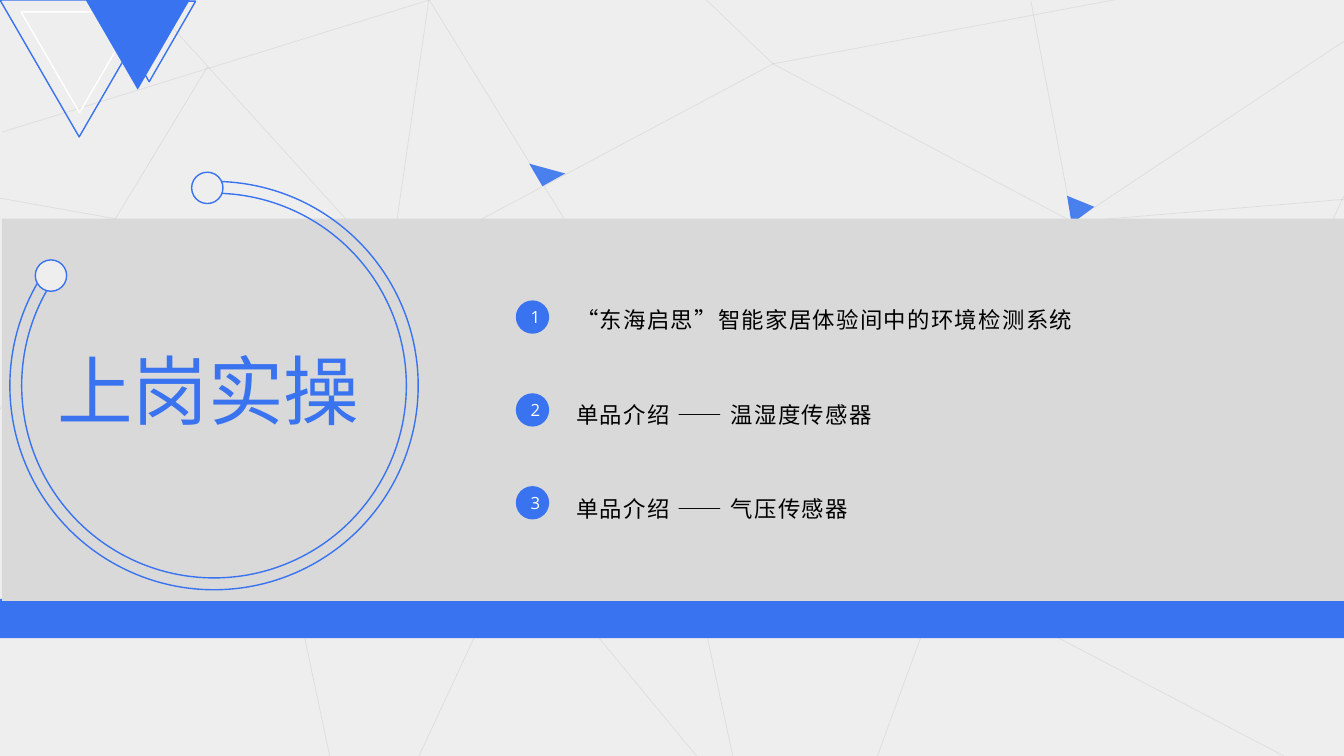
from lxml import etree
from pptx import Presentation, util as u
from pptx.dml import color
from pptx.enum import lang, shapes, text
from pptx.oxml import ns

COLORS = {
    "paper": "EEEEEE",
    "web": "BFBFBF",
    "blue": "3973EF",
    "panel": "D9D9D9",
    "white": "FFFFFF",
    "black": "000000",
}
SHAPE = shapes.MSO_SHAPE
CJK, LATIN = "Noto Sans CJK SC", "Open Sans"

WEB = {
    (9.83, 6.75): [(3.63, -0.1), (10.82, -0.1), (19.5, 1.6), (-2.92, 4.47)],
    (10.82, 0): [(0.05, 3.33), (16.36, 8.99)],
    (16.31, 8.97): [(18.59, 19.63)],
    (13.08, 13.64): [(9.73, 20.83), (17.83, 19.38)],
    (27.03, 5.59): [(21.72, 20.12), (19.46, 1.6), (25.98, 0.03),
                    (34.32, 0.74), (34.75, 4.95)],
    (19.48, 1.61): [(16.48, -1.27), (30.35, -0.43)],
    (7.14, 13.53): [(8.76, 21.18), (-0.1, 16.1), (2.84, 5.51)],
    (30.76, 11.68): [(35.28, 13.87), (33.86, 4.95)],
    (5.23, 1.68): [(-1.17, 12.24)],
    (23.72, 14.53): [(32.89, 19.33)],
}
CORNER_TRIANGLES = [
    ((0, 0, 3.99, 3.45), None, "blue"),
    ((0.53, 0.3, 2.95, 2.54), None, "white"),
    ((2.59, 0.03, 2.34, 2.03), None, "blue"),
    ((2.62, 0.2, 1.73, 1.47), None, "white"),
    ((2.16, 0, 2.62, 2.26), "blue", None),
]
TOPICS = [
    ("“东海启思”智能家居体验间中的环境检测系统", 14.58),
    ("单品介绍 —— 温湿度传感器", 8.97),
    ("单品介绍 —— 气压传感器", 8.97),
]


def set_all(target, values):
    for name, value in values.items():
        setattr(target, name, value)


def rgb(name):
    return color.RGBColor.from_string(COLORS[name])


def set_alpha(fill, percent):
    clr = fill._xPr.find(".//" + ns.qn("a:srgbClr"))
    etree.SubElement(clr, ns.qn("a:alpha"), val=str(percent * 1000))


def add_shape(s, kind, box, fill=None, line=None, rotation=0, alpha=None):
    sp = s.shapes.add_shape(kind, *map(u.Cm, box))
    sp.shadow.inherit = False
    sp.rotation = rotation
    if fill:
        sp.fill.solid()
        sp.fill.fore_color.rgb = rgb(fill)
        if alpha:
            set_alpha(sp.fill, alpha)
    else:
        sp.fill.background()
    if line:
        sp.line.color.rgb = rgb(line)
        sp.line.width = u.Pt(1)
    else:
        sp.line.fill.background()
    return sp


def add_web_line(s, start, end):
    c = s.shapes.add_connector(shapes.MSO_CONNECTOR.STRAIGHT,
                               *map(u.Cm, start + end))
    c.line.color.rgb = rgb("web")
    c.line.width = u.Pt(0.5)
    set_alpha(c.line.fill, 35)
    etree.SubElement(c._element.spPr, ns.qn("a:effectLst"))


def write(sp, words, size, font, ink, frame=None, para=None, spacing=None):
    tf = sp.text_frame
    set_all(tf, {"word_wrap": True, **(frame or {})})
    p = tf.paragraphs[0]
    set_all(p, para or {})
    r = p.add_run()
    r.text = words
    set_all(r.font, {"size": u.Pt(size), "name": font,
                     "language_id": lang.MSO_LANGUAGE_ID.SIMPLIFIED_CHINESE})
    r.font.color.rgb = rgb(ink)
    rpr = r._r.get_or_add_rPr()
    rpr.find(ns.qn("a:latin")).addnext(
        etree.Element(ns.qn("a:ea"), typeface=font))
    if spacing:
        rpr.set("spc", str(spacing * 100))


def add_text(s, box, *args, **kwargs):
    write(s.shapes.add_textbox(*map(u.Cm, box)), *args, **kwargs)


def add_topic(s, index, words, width):
    badge = add_shape(s, SHAPE.OVAL, (13, 7.57 + 2.34 * index, 0.84, 0.84), "blue")
    write(badge, str(index + 1), 12, LATIN, "white",
          frame={"vertical_anchor": text.MSO_ANCHOR.MIDDLE},
          para={"alignment": text.PP_ALIGN.CENTER})
    add_text(s, (14.27, 7.29 + 2.38 * index, width, 1.24), words, 16, CJK,
             "black", para={"line_spacing": u.Pt(28)}, spacing=1)


def add_ring(s):
    ring = add_shape(s, SHAPE.BLOCK_ARC, (0.25, 4.57, 10.29, 10.29),
                     line="blue", rotation=262.9)
    for i, value in enumerate((3.531, 186.973, 0.029)):
        ring.adjustments[i] = value
    for left, top in ((0.89, 6.55), (4.83, 4.34)):
        add_shape(s, SHAPE.OVAL, (left, top, 0.79, 0.79), "paper", "blue")


def main():
    prs = Presentation()
    set_all(prs, {"slide_width": u.Cm(33.87), "slide_height": u.Cm(19.05)})
    s = prs.slides.add_slide(prs.slide_layouts[6])
    add_shape(s, SHAPE.RECTANGLE, (0, -0.1, 33.93, 19.15), "paper")
    for hub, ends in WEB.items():
        for end in ends:
            add_web_line(s, hub, end)
    add_shape(s, SHAPE.ISOSCELES_TRIANGLE, (26.75, 5.05, 0.74, 0.61),
              "blue", rotation=202, alpha=90)
    add_shape(s, SHAPE.RECTANGLE, (-0.08, 15.09, 33.95, 0.99), "blue")
    add_shape(s, SHAPE.RECTANGLE, (0.05, 5.51, 33.88, 9.63), "panel")
    add_text(s, (1.19, 8.53, 8.38, 2.57), "上岗实操", 54, LATIN, "blue")
    add_ring(s)
    for box, fill, line in CORNER_TRIANGLES:
        add_shape(s, SHAPE.ISOSCELES_TRIANGLE, box, fill, line, rotation=180)
    add_shape(s, SHAPE.ISOSCELES_TRIANGLE, (13.26, 4.24, 0.94, 0.46),
              "blue", rotation=195.3, alpha=90)
    for index, (words, width) in enumerate(TOPICS):
        add_topic(s, index, words, width)
    prs.save("out.pptx")


if __name__ == "__main__":
    main()
